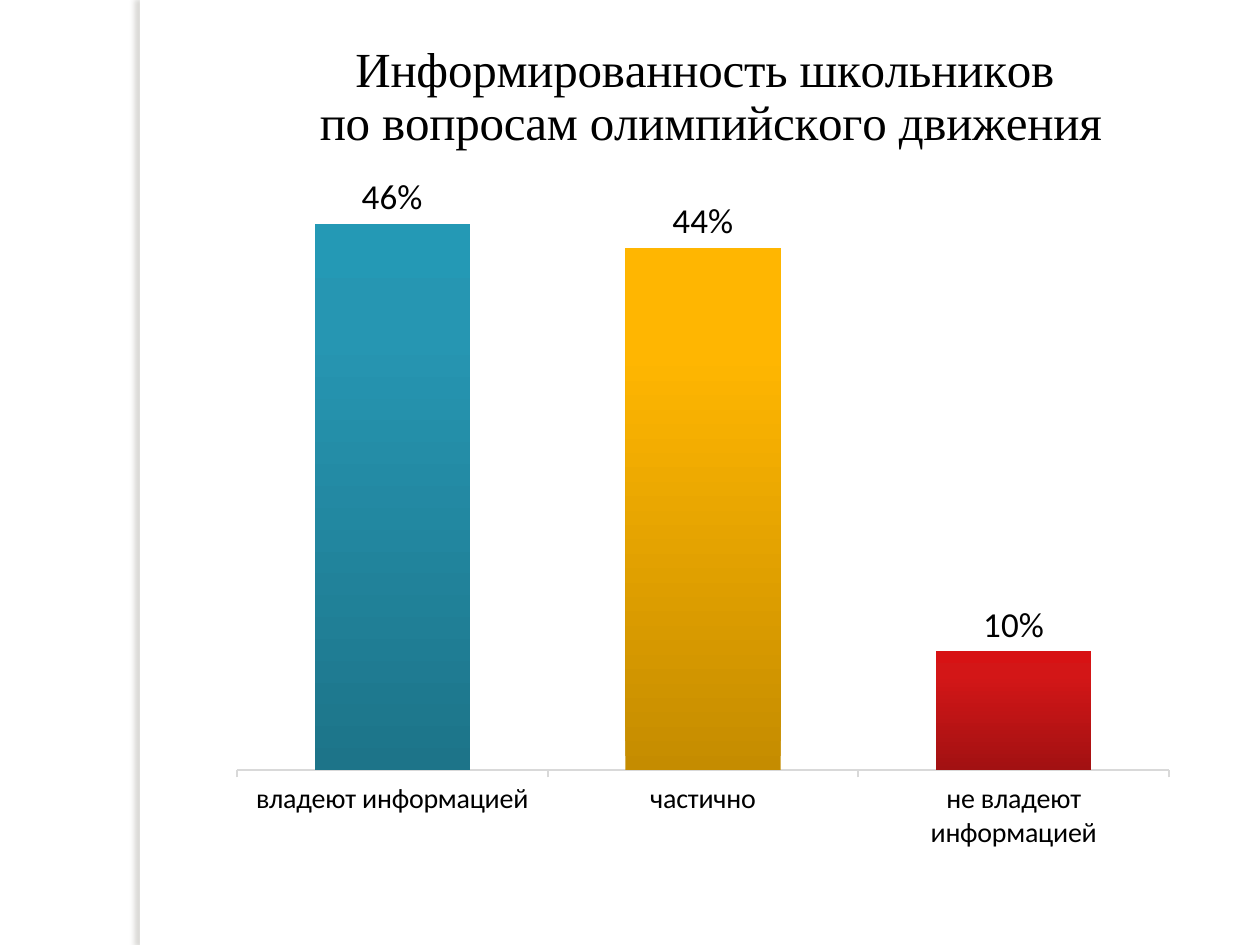
from dataclasses import dataclass

from pptx import Presentation
from pptx import util as u
from pptx.chart.data import CategoryChartData
from pptx.dml.color import RGBColor
from pptx.enum import chart as ch, shapes
from pptx.oxml import parse_xml
from pptx.oxml.ns import nsdecls, qn


@dataclass
class Theme:
    black: str = "000000"
    white: str = "FFFFFF"
    line: str = "D9D9D9"
    shade: str = "736F63"
    body: str = "Calibri"
    serif: str = "Times New Roman"
    title: int = 28
    label: int = 20
    axis: int = 16
    base: int = 10
    bars: tuple = (
        ("1D7489", "2696B2", "2499B5"),
        ("C58C00", "FFB601", "FFB602"),
        ("A21112", "D31617", "D71214"),
    )
    stops: tuple = (0, 80, 100)


def style(font, size, face, color):
    font.size = u.Pt(size)
    font.name = face
    font.bold = False
    font.color.rgb = RGBColor.from_string(color)


def write(frame, copy, **form):
    for i, line in enumerate(copy.split("\n")):
        para = frame.paragraphs[0] if i == 0 else frame.add_paragraph()
        run = para.add_run()
        run.text = line
        style(run.font, **form)


def layout(**spots):
    modes = "".join(f'<c:{k}Mode val="edge"/>' for k in "xy")
    vals = "".join(f'<c:{k} val="{v}"/>' for k, v in spots.items())
    inner = '<c:layoutTarget val="inner"/>' if "w" in spots else ""
    return parse_xml(
        f'<c:layout {nsdecls("c")}><c:manualLayout>{inner}{modes}{vals}'
        "</c:manualLayout></c:layout>")


def place(host, spot, index):
    for old in host.findall(qn("c:layout")):
        host.remove(old)
    host.insert(index, spot)


class Deck:
    def __init__(self, theme):
        self.theme = theme
        self.prs = Presentation()
        self.prs.slide_width = u.Inches(10)
        self.prs.slide_height = u.Inches(7.5)
        self.slide = self.prs.slides.add_slide(self.prs.slide_layouts[6])

    def strip(self, *box):
        bar = self.slide.shapes.add_shape(
            shapes.MSO_SHAPE.RECTANGLE, *map(u.Inches, box))
        bar.fill.solid()
        bar.fill.fore_color.rgb = RGBColor.from_string(self.theme.white)
        bar.line.fill.background()
        bar.shadow.inherit = False
        bar.element.spPr.find(qn("a:effectLst")).append(parse_xml(
            f'<a:outerShdw {nsdecls("a")} blurRad="{u.Pt(3)}" dist="{u.Pt(3)}" '
            f'dir="10800000" algn="tl" rotWithShape="0">'
            f'<a:srgbClr val="{self.theme.shade}"><a:alpha val="25000"/>'
            "</a:srgbClr></a:outerShdw>"))

    def chart(self, title, cats, vals, *box):
        look = self.theme
        data = CategoryChartData(number_format="0%")
        data.categories = cats
        data.add_series("Series 1", vals)
        chart = self.slide.shapes.add_chart(
            ch.XL_CHART_TYPE.COLUMN_CLUSTERED, *map(u.Inches, box), data).chart
        style(chart.font, look.base, look.body, look.black)
        chart.has_legend = False
        root = chart.element
        root.find(qn("c:chart")).addnext(parse_xml(
            f'<c:spPr {nsdecls("c", "a")}><a:solidFill><a:srgbClr val="{look.white}"/>'
            "</a:solidFill><a:ln><a:noFill/></a:ln></c:spPr>"))

        chart.has_title = True
        write(chart.chart_title.text_frame, title,
              size=look.title, face=look.serif, color=look.black)
        place(root.find(".//" + qn("c:title")), layout(x=0.16, y=0.01), 1)
        place(root.find(".//" + qn("c:plotArea")),
              layout(x=0.085, y=0.172, w=0.885, h=0.693), 0)
        self.axes(chart)
        self.bars(chart)

    def axes(self, chart):
        look = self.theme
        cat, val = chart.category_axis, chart.value_axis
        style(cat.tick_labels.font, look.axis, look.body, look.black)
        cat.major_tick_mark = ch.XL_TICK_MARK.OUTSIDE
        cat.has_major_gridlines = False
        cat.format.line.color.rgb = RGBColor.from_string(look.line)
        cat.format.line.width = u.Pt(1)
        val.minimum_scale, val.maximum_scale = 0, 0.5
        val.has_major_gridlines = False
        val.visible = False

    def bars(self, chart):
        look = self.theme
        plot = chart.plots[0]
        plot.gap_width, plot.overlap = 100, -24
        plot.vary_by_categories = False
        plot.has_data_labels = True
        tags = plot.data_labels
        tags.show_value = True
        tags.position = ch.XL_LABEL_POSITION.OUTSIDE_END
        tags.number_format, tags.number_format_is_linked = "0%", False
        style(tags.font, look.label, look.body, look.black)
        for i in range(len(look.bars)):
            fill = plot.series[0].points[i].format.fill
            fill.gradient()
            fill.gradient_angle = 90
        for ramp, tones in zip(chart.element.iter(qn("a:gsLst")), look.bars):
            ramp[:] = [parse_xml(
                f'<a:gs {nsdecls("a")} pos="{pos * 1000}"><a:srgbClr val="{tone}"/></a:gs>')
                for pos, tone in zip(look.stops, tones)]


def main():
    deck = Deck(Theme())
    deck.strip(1.11, 0, 0.08, 7.5)
    deck.chart(
        "Информированность школьников \nпо вопросам олимпийского движения",
        ("владеют информацией", "частично", "не владеют информацией"),
        (0.46, 0.44, 0.1),
        1.17, 0.23, 8.36, 6.8)
    deck.prs.save("out.pptx")


if __name__ == "__main__":
    main()
